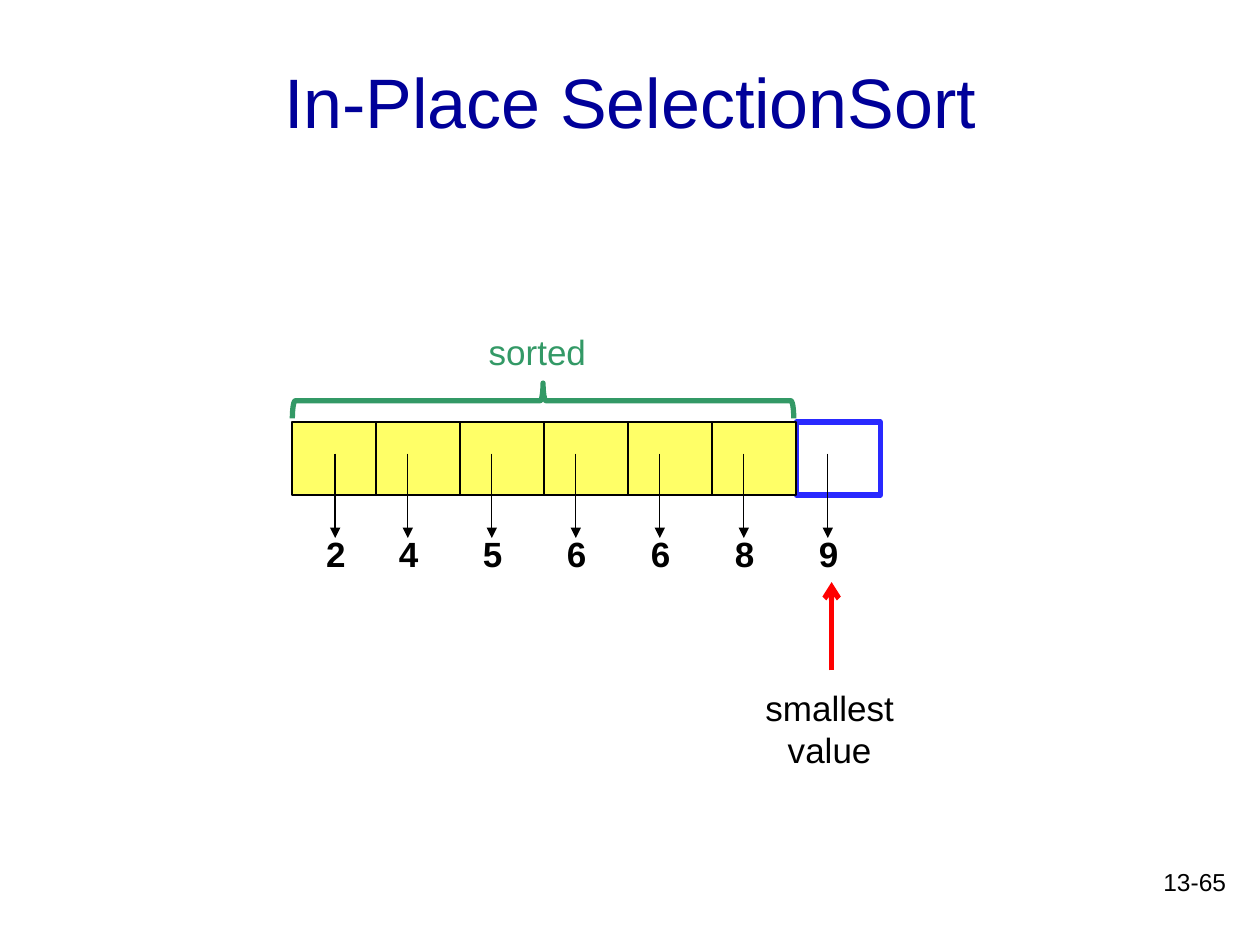
from dataclasses import dataclass
from typing import Optional

import pptx
import pptx.dml.color
import pptx.enum.shapes
import pptx.enum.text
import pptx.oxml
import pptx.oxml.ns
import pptx.util
from pptx.util import Inches

RGBColor = pptx.dml.color.RGBColor
PP_ALIGN = pptx.enum.text.PP_ALIGN
MSO_SHAPE = pptx.enum.shapes.MSO_SHAPE

BLACK = RGBColor(0x00, 0x00, 0x00)
NAVY = RGBColor(0x00, 0x00, 0x99)
YELLOW = RGBColor(0xFF, 0xFF, 0x67)
BLUE = RGBColor(0x29, 0x29, 0xFF)
GREEN = RGBColor(0x33, 0x99, 0x66)
RED = RGBColor(0xFF, 0x00, 0x00)

CELL_LEFT, CELL_TOP = 2.32, 3.35
CELL_HEIGHT = 0.58
PITCH = 2 / 3
ARROW_LEFT = 2.57
FIRST_ARROW = 2.66


@dataclass
class Label:
    text: str
    left: float
    top: float
    width: float
    height: float
    size: int = 20
    color: RGBColor = BLACK
    bold: bool = False
    align: PP_ALIGN = PP_ALIGN.LEFT
    wrap: bool = True


@dataclass
class Arrow:
    x: float
    start: float
    end: float
    color: RGBColor = BLACK
    width: float = 0.75
    head: str = "triangle"


@dataclass
class Outline:
    shape: MSO_SHAPE
    left: float
    top: float
    width: float
    height: float
    line: RGBColor
    line_width: float
    fill: Optional[RGBColor] = None
    rotation: float = 0


def set_font(p, size: int, color: RGBColor, bold: bool = False) -> None:
    p.font.name = "Arial"
    p.font.size = pptx.util.Pt(size)
    p.font.color.rgb = color
    p.font.bold = bold


def add_label(s, label: Label) -> None:
    sp = s.shapes.add_textbox(Inches(label.left), Inches(label.top),
                              Inches(label.width), Inches(label.height))
    tf = sp.text_frame
    tf.word_wrap = label.wrap
    tf.text = label.text
    for p in tf.paragraphs:
        p.alignment = label.align
        set_font(p, label.size, label.color, label.bold)


def add_arrow(s, arrow: Arrow) -> None:
    cn = s.shapes.add_connector(
        pptx.enum.shapes.MSO_CONNECTOR.STRAIGHT,
        Inches(arrow.x), Inches(arrow.start), Inches(arrow.x), Inches(arrow.end))
    cn.line.color.rgb = arrow.color
    cn.line.width = pptx.util.Pt(arrow.width)
    qn = pptx.oxml.ns.qn
    tail = cn.line._get_or_add_ln().makeelement(qn("a:tailEnd"), {"type": arrow.head})
    cn.line._get_or_add_ln().append(tail)
    sp_pr = cn._element.spPr
    sp_pr.append(sp_pr.makeelement(qn("a:effectLst"), {}))


def add_outline(s, outline: Outline) -> None:
    sp = s.shapes.add_shape(outline.shape, Inches(outline.left), Inches(outline.top),
                            Inches(outline.width), Inches(outline.height))
    sp.shadow.inherit = False
    sp.rotation = outline.rotation
    if outline.fill is None:
        sp.fill.background()
    else:
        sp.fill.solid()
        sp.fill.fore_color.rgb = outline.fill
    sp.line.color.rgb = outline.line
    sp.line.width = pptx.util.Pt(outline.line_width)


def add_title(s, text: str) -> None:
    sp = s.shapes.title
    sp.left, sp.top = Inches(0.75), Inches(0.17)
    sp.width, sp.height = Inches(8.5), Inches(1.25)
    tf = sp.text_frame
    tf.text = text
    tf.vertical_anchor = pptx.enum.text.MSO_ANCHOR.MIDDLE
    p = tf.paragraphs[0]
    p.alignment = PP_ALIGN.CENTER
    set_font(p, 40, NAVY)


def cell(index: int, line: RGBColor, width: float,
         fill: Optional[RGBColor] = None) -> Outline:
    return Outline(MSO_SHAPE.RECTANGLE, CELL_LEFT + index * PITCH, CELL_TOP,
                   PITCH, CELL_HEIGHT, line, width, fill)


def add_array(s, values: list[int]) -> None:
    last = len(values) - 1
    add_outline(s, cell(last, BLUE, 3))
    for i in range(last):
        add_outline(s, cell(i, BLACK, 1, YELLOW))
    for i, value in enumerate(values):
        x = ARROW_LEFT + i * PITCH if i else FIRST_ARROW
        add_label(s, Label(str(value), x - 0.17, 4.18, 0.42, 0.43, bold=True))
        add_arrow(s, Arrow(x, 3.6, 4.27))


def main() -> None:
    prs = pptx.Presentation()
    prs.slide_width, prs.slide_height = Inches(10), Inches(7.5)
    s = prs.slides.add_slide(prs.slide_layouts[5])
    add_title(s, "In-Place SelectionSort")
    add_label(s, Label("13-65", 7.75, 6.83, 2.08, 0.5, 14, align=PP_ALIGN.RIGHT))
    add_array(s, [2, 4, 5, 6, 6, 8, 9])
    add_outline(s, Outline(MSO_SHAPE.RIGHT_BRACE, 4.17, 1.19, 0.28, 3.98,
                           GREEN, 3, rotation=270))
    add_label(s, Label("sorted", 3.78, 2.57, 0.98, 0.44, color=GREEN, wrap=False))
    add_arrow(s, Arrow(6.6, 5.32, 4.62, RED, 3, "arrow"))
    add_label(s, Label("smallest\nvalue", 5.97, 5.4, 1.23, 0.77,
                       align=PP_ALIGN.CENTER, wrap=False))
    prs.save("out.pptx")


if __name__ == "__main__":
    main()
